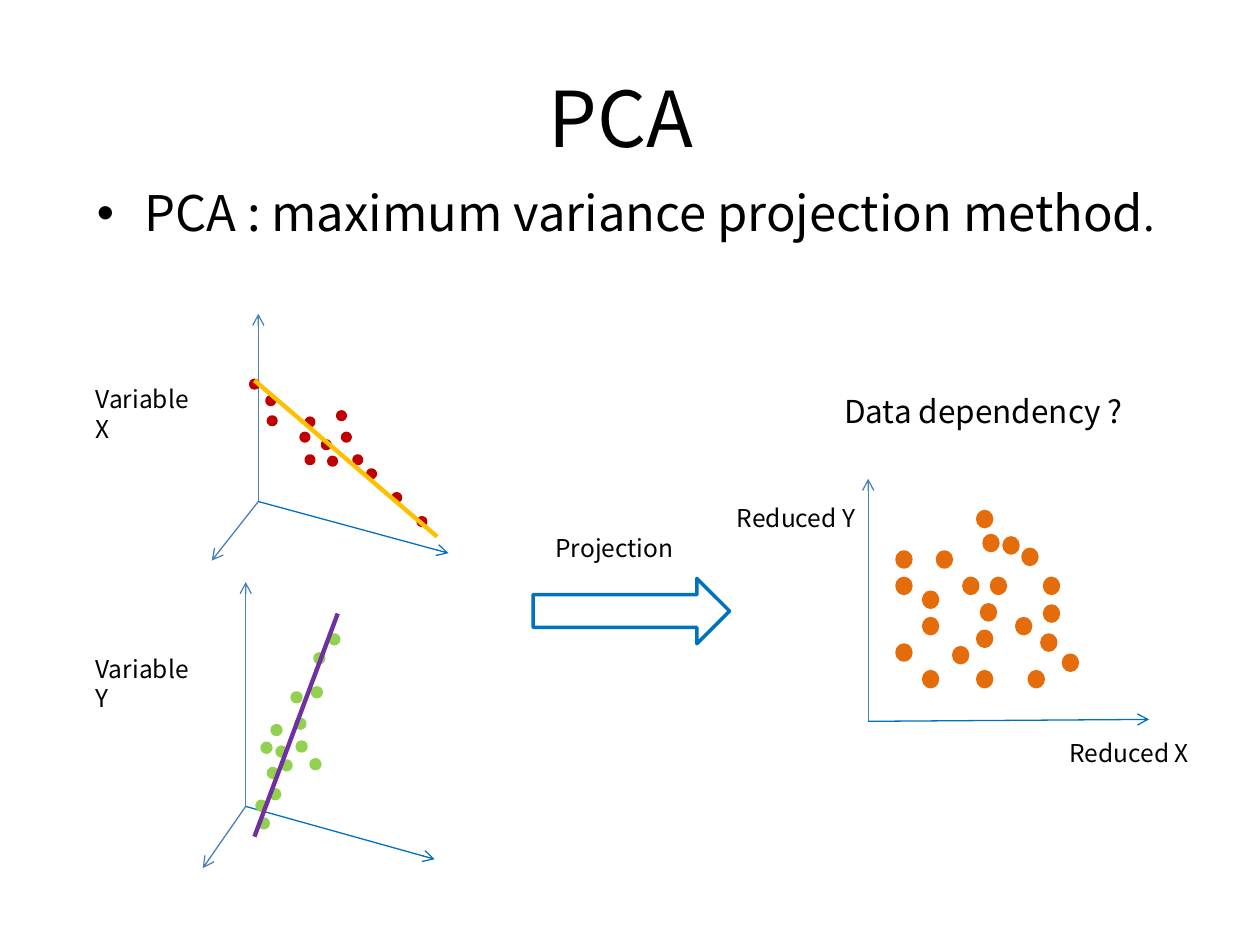
from lxml import etree
from pptx import Presentation
from pptx.dml.color import RGBColor
from pptx.enum.shapes import MSO_CONNECTOR, MSO_SHAPE
from pptx.enum.text import MSO_ANCHOR, PP_ALIGN
from pptx.oxml.ns import qn
from pptx.util import Pt

STRAIGHT = MSO_CONNECTOR.STRAIGHT
OVAL = MSO_SHAPE.OVAL
RIGHT_ARROW = MSO_SHAPE.RIGHT_ARROW
MIDDLE = MSO_ANCHOR.MIDDLE
CENTER = PP_ALIGN.CENTER

FONT = "Noto Sans CJK KR"
BLACK = "000000"
STEEL = "4B7EBC"
BLUE = "0070C0"
RED = "C00000"
GREEN = "92D050"
ORANGE = "E46C0A"
GOLD = "FFC000"
PURPLE = "7030A0"

# Left and top of each dot, in points
X_DOTS = [
    (143.3, 217.4), (152.6, 226.8), (153.4, 238.3), (175, 239), (172.1, 247.7),
    (193, 235.4), (184.3, 252), (210.2, 268.6), (202.3, 260.6), (187.9, 261.4),
    (239, 295.9), (195.8, 247.7), (175, 260.6), (224.6, 282.2),
]
Y_DOTS = [
    (180, 373.7), (167, 396), (155.5, 414.7), (169.9, 424.1), (149.8, 424.8),
    (177.8, 434.2), (161.3, 434.9), (169.2, 411.1), (153.4, 439.2), (188.6, 362.9),
    (178.6, 393.1), (146.9, 457.9), (158.4, 427), (154.8, 451.4), (148.3, 468),
]
REDUCED_DOTS = [
    (527.8, 338.4), (527.8, 353.5), (512.6, 368.6), (545, 370.1), (560.9, 345.6),
    (550.8, 330.5), (558.7, 360.7), (527.8, 383.8), (535.7, 315.4), (566.6, 330.5),
    (581, 353.5), (558.7, 383.8), (573.8, 307.4), (558.7, 292.3), (596.9, 330.5),
    (512.6, 315.4), (512.6, 330.5), (562.3, 306), (584.6, 313.9), (596.9, 346.3),
    (595.4, 362.9), (607.7, 374.4), (588.2, 383.8),
]


def color(hex_string):
    return RGBColor.from_string(hex_string)


def place(shape, left, top, width, height):
    shape.left, shape.top = Pt(left), Pt(top)
    shape.width, shape.height = Pt(width), Pt(height)


def format_run(run, size):
    run.font.name = FONT
    run.font.size = Pt(size)
    run.font.color.rgb = color(BLACK)


def fill_title(slide, text):
    title = slide.shapes.title
    place(title, 36, 21.6, 648, 90)
    title.text_frame.text = text
    title.text_frame.vertical_anchor = MIDDLE
    paragraph = title.text_frame.paragraphs[0]
    paragraph.alignment = CENTER
    format_run(paragraph.runs[0], 44)


def fill_body(slide, text, ending):
    """Write one bullet whose ending is set slightly smaller."""
    body = slide.placeholders[1]
    place(body, 48.2, 100.8, 648, 391.7)
    body.text_frame.text = text
    paragraph = body.text_frame.paragraphs[0]
    paragraph.space_before = Pt(0)
    paragraph.add_run().text = ending
    for run, size in zip(paragraph.runs, (28, 24)):
        format_run(run, size)


def add_label(slide, text, left, top, width, size=14, wrap=False):
    box = slide.shapes.add_textbox(Pt(left), Pt(top), Pt(width), Pt(size * 1.7))
    box.text_frame.word_wrap = wrap
    box.text_frame.text = text
    format_run(box.text_frame.paragraphs[0].runs[0], size)


def add_line(slide, start, end, line_color, width, arrow=False):
    line = slide.shapes.add_connector(STRAIGHT, *map(Pt, start + end))
    line.line.color.rgb = color(line_color)
    line.line.width = Pt(width)
    properties = line._element.spPr
    if arrow:
        etree.SubElement(properties.find(qn("a:ln")), qn("a:tailEnd"), type="arrow")
    etree.SubElement(properties, qn("a:effectLst"))


def add_axes(slide, origin, tips):
    """Draw arrows from the origin to each (point, colour) in tips."""
    for tip, tip_color in tips:
        add_line(slide, origin, tip, tip_color, 0.75, arrow=True)


def add_shape(slide, kind, left, top, width, height, line_color, fill=None):
    shape = slide.shapes.add_shape(kind, Pt(left), Pt(top), Pt(width), Pt(height))
    shape.shadow.inherit = False
    if fill:
        shape.fill.solid()
        shape.fill.fore_color.rgb = color(fill)
    else:
        shape.fill.background()
    shape.line.color.rgb = color(line_color)
    shape.line.width = Pt(2)


def add_dots(slide, positions, width, height, dot_color):
    for left, top in positions:
        add_shape(slide, OVAL, left, top, width, height, dot_color, dot_color)


def add_variable_plots(slide):
    add_axes(slide, (147.6, 286.6),
             [((147.6, 179.3), STEEL), ((256.3, 316.1), BLUE), ((121, 320.4), STEEL)])
    add_dots(slide, X_DOTS, 4.3, 4.3, RED)
    add_label(slide, "Variable X", 47.5, 216, 76, wrap=True)

    add_axes(slide, (140.4, 460.8),
             [((140.4, 332.6), STEEL), ((248.4, 491), BLUE), ((115.9, 496.1), STEEL)])
    add_dots(slide, Y_DOTS, 5, 5, GREEN)
    add_label(slide, "Variable Y", 47.5, 370.1, 78)

    add_line(slide, (145.4, 217.4), (249.8, 306.7), GOLD, 2.5)
    add_line(slide, (193, 350.6), (145.4, 478.1), PURPLE, 2.5)


def add_projection(slide):
    add_shape(slide, RIGHT_ARROW, 304.6, 330.5, 112.3, 37.4, BLUE)
    add_label(slide, "Projection", 310.3, 301, 101.5, wrap=True)


def add_reduced_plot(slide):
    add_label(slide, "Data dependency ?", 475.2, 220.3, 174.2, size=18)
    add_axes(slide, (496.1, 412.2), [((496.1, 273.6), STEEL), ((656.6, 411.1), BLUE)])
    add_dots(slide, REDUCED_DOTS, 7.9, 8.6, ORANGE)
    add_label(slide, "Reduced Y", 414, 283.7, 82.8)
    add_label(slide, "Reduced X", 604.1, 418.3, 82.8)


def main():
    presentation = Presentation()
    presentation.slide_width, presentation.slide_height = Pt(720), Pt(540)
    slide = presentation.slides.add_slide(presentation.slide_layouts[1])
    fill_title(slide, "PCA ")
    fill_body(slide, "PCA : maximum variance projection method", ".")
    add_variable_plots(slide)
    add_projection(slide)
    add_reduced_plot(slide)
    presentation.save("out.pptx")


if __name__ == "__main__":
    main()
